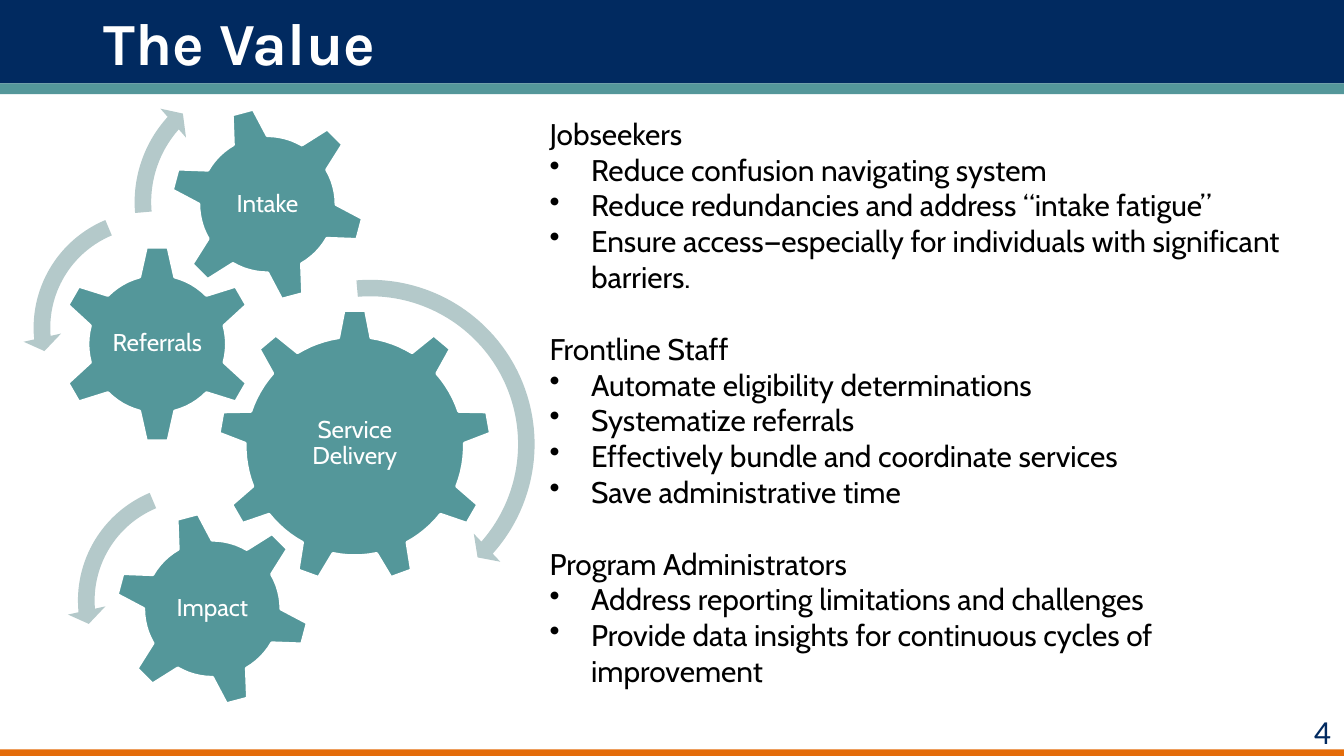
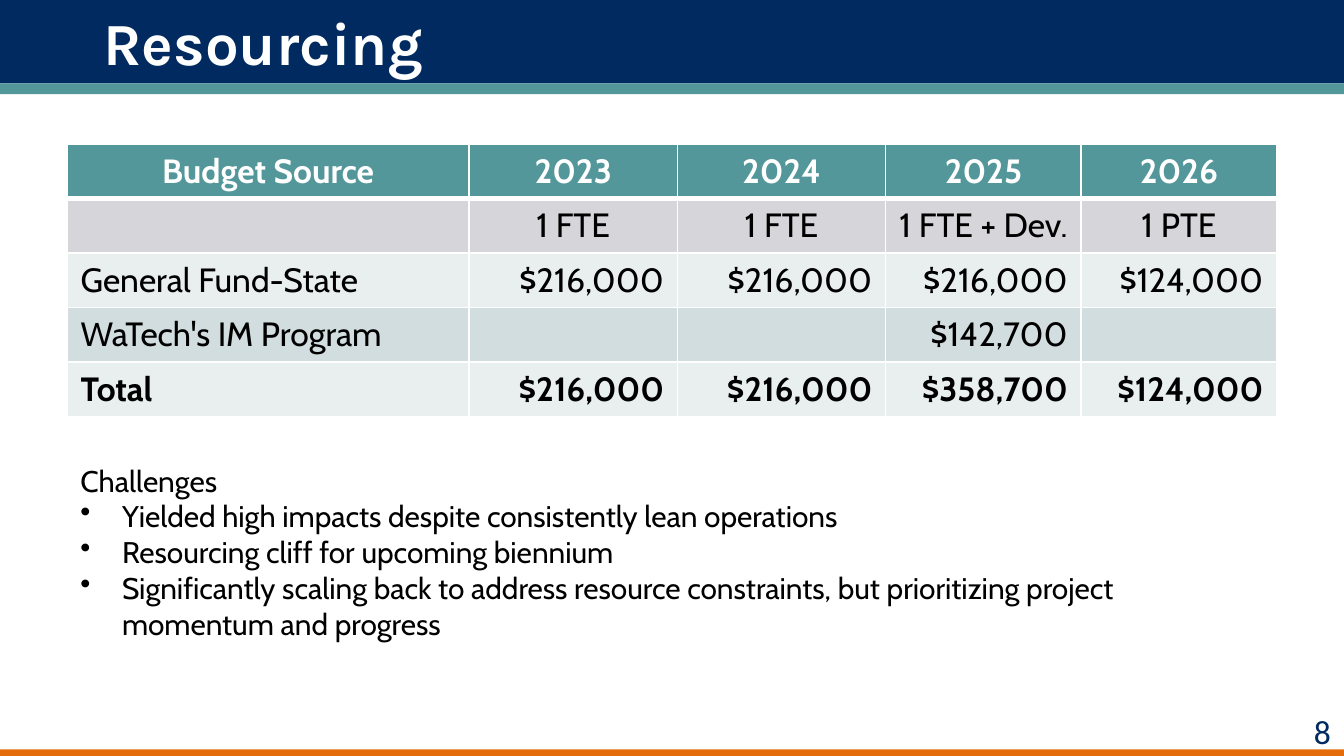
"""Build the value and resourcing slides."""
from dataclasses import dataclass
from math import asin, cos, degrees, radians, sin, sqrt
from typing import NamedTuple, Optional

from lxml import etree
from pptx import Presentation, slide, util as u
from pptx.dml import color
from pptx.enum import shapes, text
from pptx.oxml import ns

COLUMNS = 100
ROWS = COLUMNS * 9 / 16
TITLE_ONLY = 5


@dataclass(frozen=True)
class Theme:
    """Colours, fonts and type sizes of the deck."""
    navy: str = "012A60"
    teal: str = "54979A"
    mist: str = "B4C9CA"
    orange: str = "E46C0A"
    white: str = "FFFFFF"
    black: str = "000000"
    gray_row: str = "D5D5DA"
    pale_row: str = "E9EFEF"
    tint_row: str = "D1DDDE"
    title_font: str = "Karla"
    body_font: str = "Cabin"
    number_font: str = "Calibri"
    title_size: float = 32
    table_size: float = 18
    number_size: float = 18
    body_size: float = 16
    gear_size: float = 13
    section_gap: float = 19.2


THEME = Theme()


class Area(NamedTuple):
    """A rectangle in grid columns and rows."""
    left: float
    top: float
    width: float
    height: float


class Style(NamedTuple):
    """The look of a run of text."""
    font: str
    size: float
    color: str
    bold: bool = False


class Band(NamedTuple):
    """A full-width stripe of the page frame."""
    top: float
    height: float
    color: str


class Gear(NamedTuple):
    """A toothed wheel, with its radii and half widths in grid units."""
    label: str
    x: float
    y: float
    teeth: int
    turn: float
    root: float
    tip: float
    foot: float


class Arrow(NamedTuple):
    """A circular arrow, with its angles in degrees."""
    kind: shapes.MSO_SHAPE
    area: Area
    thickness: float
    head_angle: float
    end: float
    start: float
    head_width: float


class Section(NamedTuple):
    """A heading with its bullet points."""
    heading: str
    points: tuple[str, ...]


class BudgetRow(NamedTuple):
    """A table row with its fill, text style and alignments."""
    cells: tuple[str, ...]
    fill: str
    style: Style
    first: text.PP_ALIGN
    others: text.PP_ALIGN


LEFT, CENTER, RIGHT = text.PP_ALIGN.LEFT, text.PP_ALIGN.CENTER, text.PP_ALIGN.RIGHT
TITLE = Style(THEME.title_font, THEME.title_size, THEME.white, True)
BODY = Style(THEME.body_font, THEME.body_size, THEME.black)
NUMBER = Style(THEME.number_font, THEME.number_size, THEME.navy)
LABEL = Style(THEME.body_font, THEME.gear_size, THEME.white)
HEADER = Style(THEME.body_font, THEME.table_size, THEME.white, True)
CELL = Style(THEME.body_font, THEME.table_size, THEME.black)
TOTAL = CELL._replace(bold=True)

BANDS = (
    Band(0, 6.2, THEME.navy),
    Band(6.2, 0.8, THEME.teal),
    Band(ROWS - 0.5, 0.5, THEME.orange),
)
TITLE_AREA = Area(6.7, 0, 89.5, 6.2)
NUMBER_AREA = Area(94.2, 52.4, 5.8, 4)
HANGING = 3.1
TOOTH_HALF = 0.8
ARC_STEPS = 6

GEARS = (
    Gear("Service Delivery", 26.4, 33.2, 9, 0, 8.15, 10.1, 1.2),
    Gear("Referrals", 11.7, 25.6, 6, 0, 5.15, 7.2, 1.3),
    Gear("Intake", 19.9, 15.2, 6, -15, 5.1, 7.1, 1.3),
    Gear("Impact", 15.8, 45.3, 6, -15, 5.1, 7.1, 1.3),
)
CLOCKWISE = shapes.MSO_SHAPE.CIRCULAR_ARROW
COUNTER = shapes.MSO_SHAPE.LEFT_CIRCULAR_ARROW
REFERRALS_ARROW = Arrow(COUNTER, Area(1.7, 14.9, 19, 19), 0.065, 7.17, 174.82, 247.3, 0.075)
ARROWS = (
    Arrow(CLOCKWISE, Area(14.5, 20, 26.1, 26.1), 0.047, 4.98, 41.56, 265.18, 0.055),
    REFERRALS_ARROW,
    Arrow(CLOCKWISE, Area(9.2, 4.8, 20.5, 20.5), 0.06, 6.57, 221.9, 175.14, 0.07),
    REFERRALS_ARROW._replace(area=Area(5, 35.2, 19, 19)),
)

VALUE = (
    Section("Jobseekers", (
        "Reduce confusion navigating system",
        "Reduce redundancies and address “intake fatigue”",
        "Ensure access—especially for individuals with significant barriers.",
    )),
    Section("Frontline Staff", (
        "Automate eligibility determinations",
        "Systematize referrals",
        "Effectively bundle and coordinate services",
        "Save administrative time",
    )),
    Section("Program Administrators", (
        "Address reporting limitations and challenges",
        "Provide data insights for continuous cycles of improvement",
    )),
)
CHALLENGES = (
    Section("Challenges", (
        "Yielded high impacts despite consistently lean operations",
        "Resourcing cliff for upcoming biennium",
        "Significantly scaling back to address resource constraints, "
        "but prioritizing project momentum and progress",
    )),
)
BUDGET = (
    BudgetRow(("Budget Source", "2023", "2024", "2025", "2026"),
              THEME.teal, HEADER, CENTER, CENTER),
    BudgetRow(("", "1 FTE", "1 FTE", "1 FTE + Dev.", "1 PTE"),
              THEME.gray_row, CELL, LEFT, CENTER),
    BudgetRow(("General Fund-State", "$216,000", "$216,000", "$216,000", "$124,000"),
              THEME.pale_row, CELL, LEFT, RIGHT),
    BudgetRow(("WaTech's IM Program", "", "", "$142,700", ""),
              THEME.tint_row, CELL, LEFT, RIGHT),
    BudgetRow(("Total", "$216,000", "$216,000", "$358,700", "$124,000"),
              THEME.pale_row, TOTAL, LEFT, RIGHT),
)
BUDGET_COLUMNS = (29.9, 15.5, 15.5, 14.55, 14.55)
BUDGET_ROW = 4.05


def grid(units: float) -> u.Length:
    """Turn grid units into a length."""
    return u.Inches(units * 10 / COLUMNS)


def place(area: Area) -> list[u.Length]:
    """Turn an area into left, top, width and height."""
    return [grid(side) for side in area]


def rgb(value: str) -> color.RGBColor:
    """Read a hexadecimal colour."""
    return color.RGBColor.from_string(value)


def write(para, words: str, style: Style, align: Optional[text.PP_ALIGN] = None) -> None:
    """Add one styled run to a paragraph."""
    para.alignment = align
    span = para.add_run()
    span.text = words
    span.font.name, span.font.size = style.font, u.Pt(style.size)
    span.font.bold = style.bold
    span.font.color.rgb = rgb(style.color)


def paint(shape, fill: str, line: Optional[str] = None) -> None:
    """Give a shape a flat fill and an optional outline."""
    shape.shadow.inherit = False
    shape.fill.solid()
    shape.fill.fore_color.rgb = rgb(fill)
    if line:
        shape.line.color.rgb = rgb(line)
        shape.line.width = u.Pt(1.5)
    else:
        shape.line.fill.background()


def add_box(page: slide.Slide, area: Area):
    """Add a wrapping text box and return its frame."""
    frame = page.shapes.add_textbox(*place(area)).text_frame
    frame.word_wrap = True
    frame.auto_size = text.MSO_AUTO_SIZE.SHAPE_TO_FIT_TEXT
    return frame


def add_page(deck, heading: str, number: int) -> slide.Slide:
    """Add a page with bands, title and page number."""
    page = deck.slides.add_slide(deck.slide_layouts[TITLE_ONLY])
    for band in BANDS:
        area = Area(0, band.top, COLUMNS, band.height)
        paint(page.shapes.add_shape(shapes.MSO_SHAPE.RECTANGLE, *place(area)), band.color)
    write(add_box(page, NUMBER_AREA).paragraphs[0], str(number), NUMBER, RIGHT)
    title = page.shapes.title
    title.left, title.top, title.width, title.height = place(TITLE_AREA)
    title.text_frame.auto_size = text.MSO_AUTO_SIZE.NONE
    title.text_frame.vertical_anchor = text.MSO_ANCHOR.MIDDLE
    write(title.text_frame.paragraphs[0], heading, TITLE, LEFT)
    page.shapes.element.append(title.element)
    return page


def add_sections(page: slide.Slide, area: Area, sections: tuple[Section, ...]) -> None:
    """Write headings and bullet points in one box."""
    frame = add_box(page, area)
    for index, section in enumerate(sections):
        para = frame.add_paragraph() if index else frame.paragraphs[0]
        if index:
            para.space_before = u.Pt(THEME.section_gap)
        write(para, section.heading, BODY)
        for point in section.points:
            para = frame.add_paragraph()
            props = para._p.get_or_add_pPr()
            props.set("marL", str(grid(HANGING)))
            props.set("indent", str(-grid(HANGING)))
            etree.SubElement(props, ns.qn("a:buChar"), char="•")
            write(para, point, BODY)


def gear_outline(gear: Gear) -> list[tuple[int, int]]:
    """Trace the teeth and the arcs between them, clockwise from the top."""
    step = 360 / gear.teeth
    foot_angle = degrees(asin(gear.foot / gear.root))
    tip_angle = degrees(asin(TOOTH_HALF / gear.tip))
    tip_radius = sqrt(gear.tip ** 2 + TOOTH_HALF ** 2)
    gap = step - 2 * foot_angle
    polar = []
    for tooth in range(gear.teeth):
        angle = gear.turn + tooth * step
        polar += [(angle - tip_angle, tip_radius), (angle + tip_angle, tip_radius)]
        polar += [(angle + foot_angle + gap * part / ARC_STEPS, gear.root)
                  for part in range(ARC_STEPS + 1)]
    return [(grid(gear.x + radius * sin(radians(angle))),
             grid(gear.y - radius * cos(radians(angle)))) for angle, radius in polar]


def add_gear(group, gear: Gear) -> None:
    """Draw a gear with its label in the middle."""
    first, *rest = gear_outline(gear)
    builder = group.shapes.build_freeform(*first, scale=1.0)
    builder.add_line_segments(rest, close=True)
    wheel = builder.convert_to_shape()
    paint(wheel, THEME.teal, THEME.white)
    frame = wheel.text_frame
    frame.word_wrap = True
    frame.vertical_anchor = text.MSO_ANCHOR.MIDDLE
    frame.margin_left = frame.margin_right = grid(gear.tip * 0.43)
    frame.margin_top = frame.margin_bottom = grid(gear.tip * 0.5)
    frame.paragraphs[0].line_spacing = 0.9
    write(frame.paragraphs[0], gear.label, LABEL, CENTER)


def add_arrow(group, arrow: Arrow) -> None:
    """Draw a circular arrow."""
    shape = group.shapes.add_shape(arrow.kind, *place(arrow.area))
    paint(shape, THEME.mist)
    angles = [angle * 0.6 for angle in (arrow.head_angle, arrow.end, arrow.start)]
    for index, value in enumerate((arrow.thickness, *angles, arrow.head_width)):
        shape.adjustments[index] = value


def add_borders(cell, top: float, bottom: float) -> None:
    """Give a cell white borders, with widths in points."""
    props = cell._tc.get_or_add_tcPr()
    for side, width in (("L", 1), ("R", 1), ("T", top), ("B", bottom)):
        line = etree.SubElement(props, ns.qn(f"a:ln{side}"), w=str(u.Pt(width)))
        fill = etree.SubElement(line, ns.qn("a:solidFill"))
        etree.SubElement(fill, ns.qn("a:srgbClr"), val=THEME.white)


def add_budget(page: slide.Slide) -> None:
    """Add the budget table."""
    area = Area(5, 10.7, sum(BUDGET_COLUMNS), BUDGET_ROW * len(BUDGET))
    table = page.shapes.add_table(len(BUDGET), len(BUDGET_COLUMNS), *place(area)).table
    table.horz_banding = False
    for column, width in zip(table.columns, BUDGET_COLUMNS):
        column.width = grid(width)
    for index, row in enumerate(BUDGET):
        table.rows[index].height = grid(BUDGET_ROW)
        for position, words in enumerate(row.cells):
            cell = table.cell(index, position)
            add_borders(cell, 3 if index == 1 else 1, 3 if index == 0 else 1)
            cell.fill.solid()
            cell.fill.fore_color.rgb = rgb(row.fill)
            if words:
                align = row.others if position else row.first
                write(cell.text_frame.paragraphs[0], words, row.style, align)


def main() -> None:
    """Build and save the deck."""
    deck = Presentation()
    deck.slide_width, deck.slide_height = grid(COLUMNS), grid(ROWS)
    value = add_page(deck, "The Value", 4)
    group = value.shapes.add_group_shape()
    for gear in GEARS:
        add_gear(group, gear)
    for arrow in ARROWS:
        add_arrow(group, arrow)
    add_sections(value, Area(39.9, 8.1, 60.1, 44.1), VALUE)
    resourcing = add_page(deck, "Resourcing", 8)
    add_budget(resourcing)
    add_sections(resourcing, Area(5, 33.9, 90, 14.5), CHALLENGES)
    deck.save("out.pptx")


if __name__ == "__main__":
    main()
